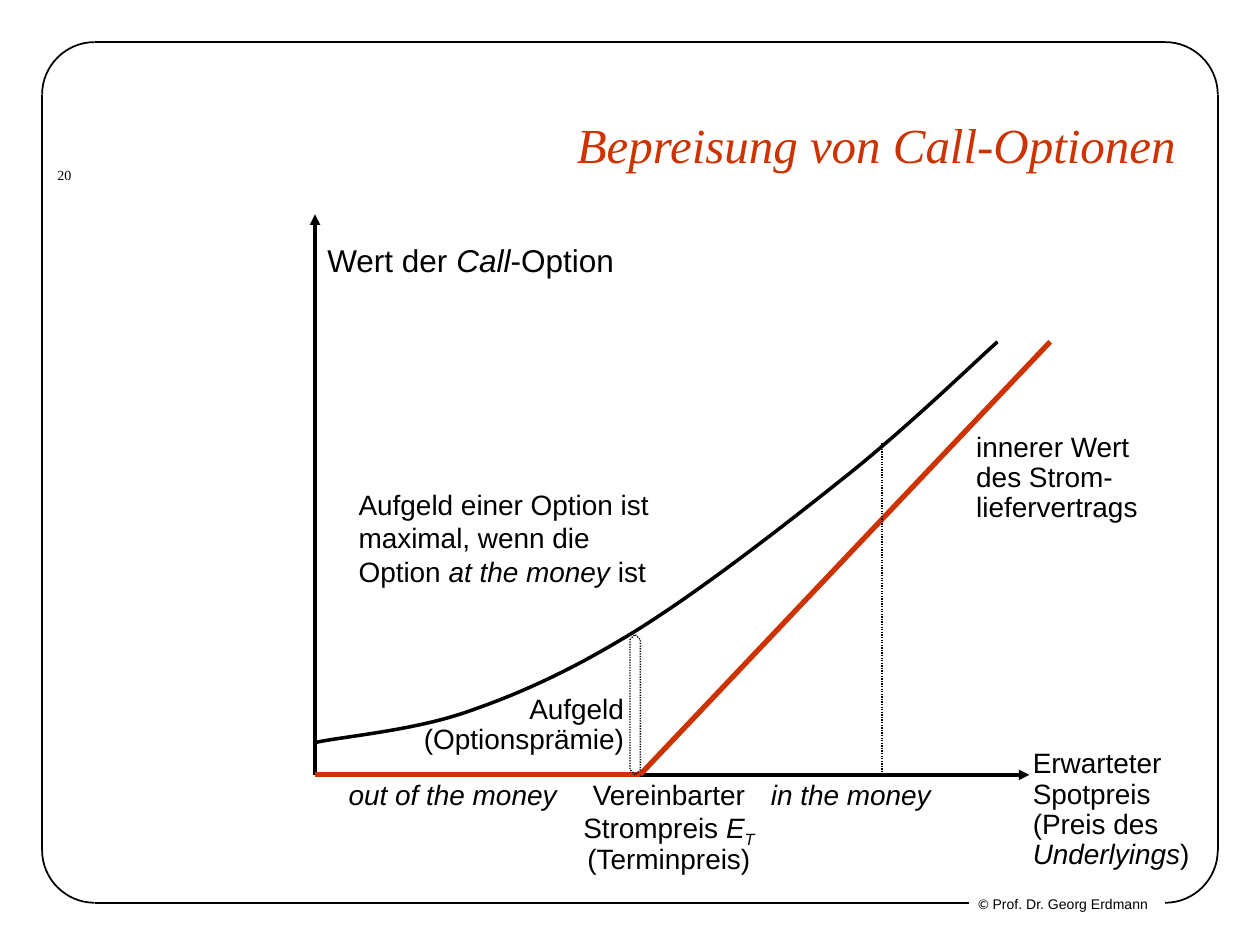
from pptx import Presentation
from pptx.dml.color import RGBColor
from pptx.enum.dml import MSO_LINE
from pptx.enum.shapes import MSO_CONNECTOR, MSO_SHAPE
from pptx.enum.text import MSO_ANCHOR, PP_ALIGN
from pptx.oxml.ns import qn
from pptx.util import Cm, Pt
from lxml import etree

STRAIGHT = MSO_CONNECTOR.STRAIGHT
UP_DOWN_ARROW = MSO_SHAPE.UP_DOWN_ARROW
DOTTED = MSO_LINE.ROUND_DOT
LEFT, CENTER, RIGHT = PP_ALIGN.LEFT, PP_ALIGN.CENTER, PP_ALIGN.RIGHT
TOP, BOTTOM = MSO_ANCHOR.TOP, MSO_ANCHOR.BOTTOM
BLACK, RED = "000000", "CC3300"
SANS, SERIF = "Arial", "Times New Roman"


def color(value):
    return RGBColor.from_string(value)


def add_run(p, text, size=16, font=SANS, fill=BLACK, italic=False, baseline=0):
    """Add text to a paragraph; each newline becomes a line break."""
    for i, part in enumerate(text.split("\n")):
        if i:
            p.add_line_break()
        r = p.add_run()
        r.text = part
        r.font.size = Pt(size)
        r.font.name = font
        r.font.italic = italic
        r.font.color.rgb = color(fill)
        if baseline:
            r.font._element.set("baseline", str(baseline * 1000))


def bezier(p0, p1, p2, p3, steps=16):
    """Points on a cubic curve, without its start."""
    for i in range(1, steps + 1):
        t = i / steps
        u = 1 - t
        yield tuple(u**3 * a + 3 * u * u * t * b + 3 * u * t * t * c + t**3 * d
                    for a, b, c, d in zip(p0, p1, p2, p3))


class Slide:
    def __init__(self, prs):
        self.s = prs.slides.add_slide(prs.slide_layouts[6])

    def stroke(self, sp, fill, width, dash=None):
        sp.line.color.rgb = color(fill)
        sp.line.width = Pt(width)
        if dash is not None:
            sp.line.dash_style = dash

    def line(self, start, end, fill=BLACK, width=1, dash=None, head=False):
        sp = self.s.shapes.add_connector(STRAIGHT, *map(Cm, start + end))
        self.stroke(sp, fill, width, dash)
        if head:
            etree.SubElement(sp.line._get_or_add_ln(), qn("a:headEnd"), type="triangle")
        etree.SubElement(sp._element.spPr, qn("a:effectLst"))

    def curve(self, start, *segments, width=1):
        points, p0 = [], start
        for segment in segments:
            points += bezier(p0, *segment)
            p0 = segment[-1]
        builder = self.s.shapes.build_freeform(Cm(start[0]), Cm(start[1]))
        builder.add_line_segments([(Cm(x), Cm(y)) for x, y in points], close=False)
        sp = builder.convert_to_shape()
        sp.fill.background()
        sp.shadow.inherit = False
        self.stroke(sp, BLACK, width)

    def double_arrow(self, x, y, w, h):
        sp = self.s.shapes.add_shape(UP_DOWN_ARROW, Cm(x), Cm(y), Cm(w), Cm(h))
        sp.adjustments[0], sp.adjustments[1] = 0, 2.5
        sp.fill.background()
        sp.shadow.inherit = False
        self.stroke(sp, BLACK, 0.75, DOTTED)

    def text(self, x, y, w, h, *runs, align=LEFT, anchor=TOP, spacing=0.9, wrap=True):
        """Each run is a pair of text and format."""
        tf = self.s.shapes.add_textbox(Cm(x), Cm(y), Cm(w), Cm(h)).text_frame
        tf.word_wrap = wrap
        tf.vertical_anchor = anchor
        p = tf.paragraphs[0]
        p.alignment = align
        p.line_spacing = spacing
        for text, style in runs:
            add_run(p, text, **style)


def main():
    prs = Presentation()
    prs.slide_width, prs.slide_height = Cm(25.4), Cm(19.05)
    s = Slide(prs)
    plain, italic = {}, {"italic": True}

    # Frame with rounded corners, open at the copyright line
    left, top, right, bottom, radius = 0.85, 0.85, 24.55, 18.2, 1.06
    s.line((left + radius, bottom), (19.53, bottom))
    s.line((left + radius, top), (right - radius, top))
    for x, dx in ((left, 1), (right, -1)):
        s.line((x, bottom - radius), (x, top + radius))
        for y, dy in ((top, 1), (bottom, -1)):
            bend = radius * 0.45
            s.curve((x, y + dy * radius),
                    ((x, y + dy * bend), (x + dx * bend, y), (x + dx * radius, y)))

    # Footer, page number and title
    s.text(19.46, 17.93, 3.99, 0.6, ("© ", {"size": 8, "font": "Calibri"}),
           ("Prof. Dr. Georg Erdmann", {"size": 8}), spacing=1, wrap=False)
    s.text(0.91, 3.23, 1.07, 0.58, ("20", {"size": 8, "font": SERIF}),
           spacing=1, wrap=False)
    s.text(4.67, 1.07, 19.28, 2.54,
           ("Bepreisung von Call-Optionen",
            {"size": 28, "font": SERIF, "fill": RED, "italic": True}),
           align=RIGHT, anchor=BOTTOM, spacing=1)

    # Axes and intrinsic value
    origin, strike = (6.35, 15.62), (12.9, 15.62)
    s.line((6.35, 4.32), origin, width=2, head=True)
    s.line((20.75, 15.62), origin, width=2, head=True)
    s.line(strike, (21.17, 6.89), RED, 3)
    s.line(strike, origin, RED, 3)

    # Option value and premium markers
    s.line((17.78, 8.94), (17.78, 15.62), width=0.75, dash=DOTTED)
    s.double_arrow(12.7, 12.79, 0.21, 2.83)
    s.curve((6.35, 14.97),
            ((6.84, 14.86), (8.31, 14.73), (9.36, 14.37)),
            ((10.42, 14.01), (11.43, 13.56), (12.7, 12.79)),
            ((13.97, 12.02), (15.69, 10.69), (16.93, 9.7)),
            ((18.17, 8.73), (19.59, 7.36), (20.11, 6.89)), width=2)

    # Axis labels
    s.text(6.35, 4.83, 6.43, 0.94, ("Wert der ", {"size": 18}),
           ("Call", {"size": 18, "italic": True}), ("-Option", {"size": 18}))
    s.text(20.57, 14.99, 3.73, 2.72, ("Erwarteter Spotpreis (Preis des ", plain),
           ("Underlyings", italic), (")", plain))
    s.text(6.78, 15.62, 5.08, 0.86, ("out of the money", italic))
    s.text(15.29, 15.62, 4.6, 0.86, ("in the money", italic))
    s.text(11.43, 15.62, 4.11, 2.11, ("Vereinbarter Strompreis ", plain), ("E", italic),
           ("T ", {"italic": True, "baseline": -25}), ("(Terminpreis)", plain),
           align=CENTER)

    # Notes on the curves
    s.text(19.43, 8.61, 4.6, 2.11, ("innerer Wert des Strom-liefervertrags", plain))
    s.text(6.98, 9.7, 6.55, 2.29,
           ("Aufgeld einer Option ist maximal, wenn die Option ", plain),
           ("at the money", italic), (" ist", plain), spacing=1)
    s.text(8.05, 13.89, 4.78, 1.5, ("Aufgeld\n(Optionsprämie)", plain), align=RIGHT)

    prs.save("out.pptx")


if __name__ == "__main__":
    main()
